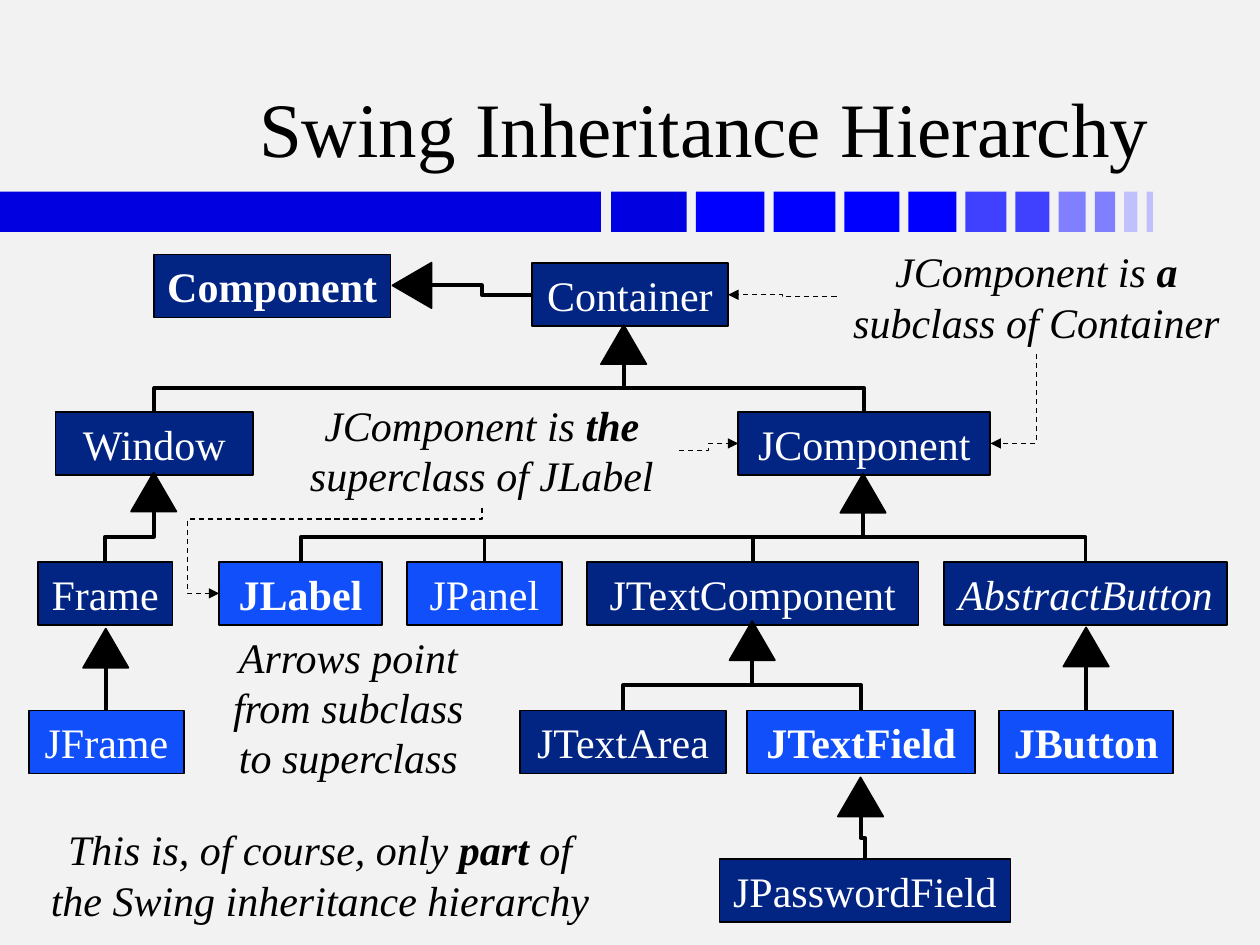
import pptx
import pptx.util
import pptx.dml.color
import pptx.enum.dml
import pptx.enum.shapes
import pptx.enum.text
import pptx.oxml
import pptx.oxml.ns

Inches = pptx.util.Inches
SHAPE = pptx.enum.shapes.MSO_SHAPE
LINK = pptx.enum.shapes.MSO_CONNECTOR
ALIGN = pptx.enum.text.PP_ALIGN
ANCHOR = pptx.enum.text.MSO_ANCHOR
FIT = pptx.enum.text.MSO_AUTO_SIZE
FONT = "Times New Roman"
NAVY, BLUE, BLACK, WHITE = "022584", "114FFB", "000000", "FFFFFF"
TOP, LEFT, BOTTOM, RIGHT = range(4)  # sites of a rectangle
BASE = 3  # site in the middle of a triangle's base

# Name, left, top, width, fill, style; relative to the tree's box
ROWS = [1.37, 2.56, 3.74, 4.92]
NODES = [
    ("Component", 1.22, 0.12, 1.88, NAVY, "b"),
    ("Container", 4.22, 0.19, 1.56, NAVY, ""),
    ("Window", 0.44, ROWS[0], 1.57, NAVY, ""),
    ("JComponent", 5.86, ROWS[0], 2, NAVY, ""),
    ("Frame", 0.3, ROWS[1], 1.07, NAVY, ""),
    ("JLabel", 1.74, ROWS[1], 1.29, BLUE, "b"),
    ("JPanel", 3.23, ROWS[1], 1.23, BLUE, ""),
    ("JTextComponent", 4.66, ROWS[1], 2.63, NAVY, ""),
    ("AbstractButton", 7.49, ROWS[1], 2.25, NAVY, "i"),
    ("JFrame", 0.23, ROWS[2], 1.23, BLUE, ""),
    ("JTextArea", 4.13, ROWS[2], 1.63, NAVY, ""),
    ("JTextField", 5.93, ROWS[2], 1.81, BLUE, "b"),
    ("JButton", 7.93, ROWS[2], 1.38, BLUE, "b"),
    ("JPasswordField", 5.71, ROWS[3], 2.31, NAVY, ""),
]
# Left and top of the triangle below each superclass, then its subclasses
HEADS = [
    (4.77, 0.68, "Window JComponent"),
    (1.04, 1.85, "Frame"),
    (6.67, 1.86, "JLabel JPanel JTextComponent AbstractButton"),
    (0.66, 3.09, "JFrame"),
    (5.79, 3.03, "JTextArea JTextField"),
    (8.44, 3.08, "JButton"),
    (6.65, 4.27, "JPasswordField"),
]
# Key, left, top, width, height, paragraphs with the bold part between bars
NOTES = [
    ("sub", 6.64, 0, 3.17, 0.91, ["JComponent is |a| subclass of Container"]),
    ("super", 2.26, 1.22, 3.13, 0.91, ["JComponent is |the| superclass of JLabel"]),
    ("arrows", 1.61, 3.06, 2.31, 1.31, ["Arrows point from subclass to superclass"]),
    ("part", 0.2, 4.59, 4.68, 0.91,
     ["This is, of course, only |part| of", "the Swing inheritance hierarchy"]),
]


def color(code):
    return pptx.dml.color.RGBColor.from_string(code)


def style(run, size, code, bold=False, ital=False):
    font = run.font
    font.name, font.size = FONT, pptx.util.Pt(size)
    font.bold, font.italic = bold, ital
    font.color.rgb = color(code)


def shape(slide, kind, box, fill, edge=None):
    item = slide.shapes.add_shape(kind, *map(Inches, box))
    item.shadow.inherit = False
    item.fill.solid()
    item.fill.fore_color.rgb = color(fill)
    if edge:
        item.line.color.rgb = color(edge)
        item.line.width = pptx.util.Pt(1)
    else:
        item.line.fill.background()
    return item


def title(slide, box):
    frame = slide.shapes.add_textbox(*map(Inches, box)).text_frame
    frame.word_wrap = True
    frame.vertical_anchor = ANCHOR.BOTTOM
    frame.text = "Swing Inheritance Hierarchy"
    frame.paragraphs[0].alignment = ALIGN.RIGHT
    style(frame.paragraphs[0].runs[0], 44, BLACK)


def band(slide, box):
    """One long bar, then blocks that shrink and fade to the right."""
    left, top, width, height = box
    shape(slide, SHAPE.RECTANGLE, (left, top, 4.77, height), "0000E0")
    fills = (["0000E0"] + ["0000FF"] * 4 + ["4040FF"] * 2
             + ["8080FF"] * 2 + ["C0C0FF"] * 2)
    sizes = [0.6 - 0.55 * n / 10 for n in range(len(fills))]
    start = left + 4.85
    gap = (left + width - start - sum(sizes)) / (len(sizes) - 1)
    for size, fill in zip(sizes, fills):
        shape(slide, SHAPE.RECTANGLE, (start, top, size, height), fill)
        start += size + gap


def node(slide, box, name, fill, look):
    item = shape(slide, SHAPE.RECTANGLE, box, fill, BLACK)
    frame = item.text_frame
    frame.word_wrap = False
    frame.auto_size = FIT.SHAPE_TO_FIT_TEXT
    frame.text = name
    frame.paragraphs[0].alignment = ALIGN.CENTER
    style(frame.paragraphs[0].runs[0], 24, WHITE, look == "b", look == "i")
    return item


def note(slide, box, lines):
    item = slide.shapes.add_textbox(*map(Inches, box))
    frame = item.text_frame
    frame.word_wrap = True
    frame.auto_size = FIT.SHAPE_TO_FIT_TEXT
    for row, line in enumerate(lines):
        para = frame.add_paragraph() if row else frame.paragraphs[0]
        para.alignment = ALIGN.CENTER
        for part, text in enumerate(line.split("|")):
            run = para.add_run()
            run.text = text
            style(run, 24, BLACK, part % 2 == 1, True)
    return item


def turn(line):
    """Turn an elbow so that it leaves its start upright."""
    dx, dy = line.end_x - line.begin_x, line.end_y - line.begin_y
    midx, midy = (line.begin_x + line.end_x) // 2, (line.begin_y + line.end_y) // 2
    rise, right = dy < 0, dx > 0
    line.width, line.height = abs(dy), abs(dx)
    line.left, line.top = midx - abs(dy) // 2, midy - abs(dx) // 2
    xfrm = line.element.spPr.xfrm
    xfrm.set("rot", str((270 if rise and not right else 90) * 60000))
    xfrm.set("flipH", str(int(rise and right)))
    xfrm.set("flipV", str(int(rise)))


def link(slide, start, site, end, goal, kind=LINK.ELBOW, weight=2.25):
    line = slide.shapes.add_connector(kind, 0, 0, 0, 0)
    line.begin_connect(start, site)
    line.end_connect(end, goal)
    line.line.color.rgb = color(BLACK)
    line.line.width = pptx.util.Pt(weight)
    pptx.oxml.ns  # namespaces for the empty effect list below
    line.element.spPr.append(pptx.oxml.parse_xml(
        "<a:effectLst %s/>" % pptx.oxml.ns.nsdecls("a")))
    return line


def climb(slide, start, head):
    """Join the top of a subclass to the base of a triangle."""
    base = head.left + head.width // 2
    line = link(slide, start, TOP, head, BASE)
    line.begin_x, line.begin_y = start.left + start.width // 2, start.top
    line.end_x, line.end_y = base, head.top + head.height
    if abs(line.end_x - line.begin_x) < Inches(0.01):
        line.end_x = line.begin_x
        line.element.spPr.prstGeom.set("prst", "line")
    else:
        turn(line)


def point(slide, start, site, end, goal, bend=3, shifts=()):
    """Dashed arrow from a note to the class it speaks of."""
    line = link(slide, start, site, end, goal, weight=0.75)
    line.line.dash_style = pptx.enum.dml.MSO_LINE.DASH
    mark = pptx.oxml.parse_xml(
        '<a:tailEnd %s type="triangle"/>' % pptx.oxml.ns.nsdecls("a"))
    line.line._get_or_add_ln().append(mark)
    if site == BOTTOM:
        turn(line)
    geom = line.element.spPr.prstGeom
    geom.set("prst", "bentConnector%d" % bend)
    guides = geom.get_or_add_avLst()
    for number, shift in enumerate(shifts, 1):
        guides.append(pptx.oxml.parse_xml(
            '<a:gd %s name="adj%d" fmla="val %d"/>'
            % (pptx.oxml.ns.nsdecls("a"), number, shift * 100000)))


def tree(slide, box):
    x, y = box[:2]
    nodes = {name: node(slide, (x + left, y + top, width, 0.5), name, fill, look)
             for name, left, top, width, fill, look in NODES}

    # Triangles and the lines that reach them
    for left, top, names in HEADS:
        head = shape(slide, SHAPE.ISOSCELES_TRIANGLE,
                     (x + left, y + top, 0.36, 0.31), BLACK, BLACK)
        for name in names.split():
            climb(slide, nodes[name], head)
    head = shape(slide, SHAPE.ISOSCELES_TRIANGLE,
                 (x + 3.09, y + 0.21, 0.36, 0.31), BLACK, BLACK)
    head.rotation = 270
    line = link(slide, nodes["Container"], LEFT, head, BASE)
    line.end_x = head.left + (head.width + head.height) // 2
    line.end_y = head.top + head.height // 2

    # Notes and their arrows
    notes = {key: note(slide, (x + left, y + top, width, height), lines)
             for key, left, top, width, height, lines in NOTES}
    point(slide, notes["sub"], LEFT, nodes["Container"], RIGHT)
    point(slide, notes["sub"], BOTTOM, nodes["JComponent"], RIGHT, 2)
    point(slide, notes["super"], RIGHT, nodes["JComponent"], LEFT)
    point(slide, notes["super"], BOTTOM, nodes["JLabel"], LEFT, 4, (0.13, 1.12))


def main():
    deck = pptx.Presentation()
    deck.slide_width, deck.slide_height = Inches(10), Inches(7.5)
    slide = deck.slides.add_slide(deck.slide_layouts[6])
    slide.background.fill.solid()
    slide.background.fill.fore_color.rgb = color("F2F2F2")
    band(slide, (0, 1.52, 9.15, 0.32))
    title(slide, (0.74, 0.19, 8.48, 1.23))
    tree(slide, (0, 1.9, 10, 5.6))
    deck.save("out.pptx")


if __name__ == "__main__":
    main()
